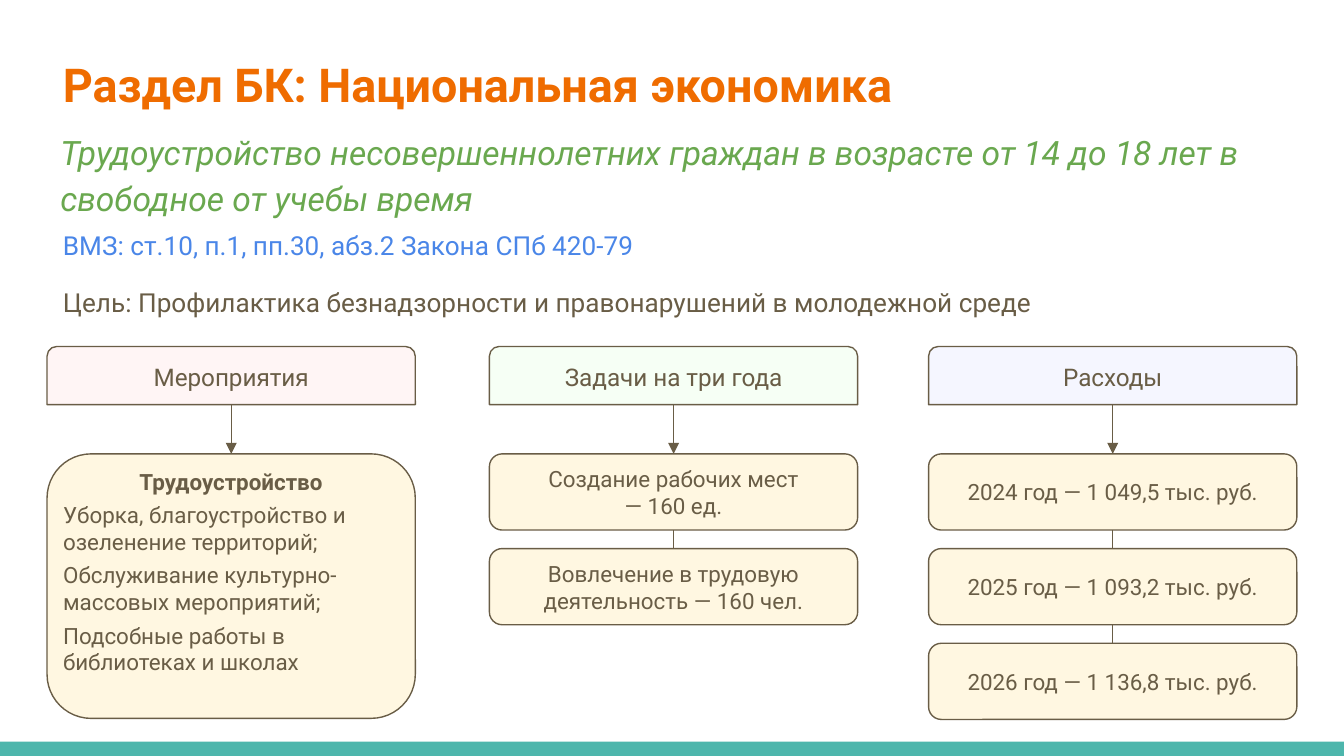
import pptx
import pptx.dml.color
import pptx.enum.shapes
import pptx.enum.text
import pptx.oxml.ns
import pptx.util
from lxml import etree

Cm = pptx.util.Cm
RGBColor = pptx.dml.color.RGBColor
Align = pptx.enum.text.PP_ALIGN
Anchor = pptx.enum.text.MSO_ANCHOR
Shape = pptx.enum.shapes.MSO_SHAPE

ORANGE = RGBColor(0xEF, 0x6C, 0x00)
GREEN = RGBColor(0x6A, 0xA8, 0x4F)
BLUE = RGBColor(0x4A, 0x86, 0xE8)
BROWN = RGBColor(0x69, 0x5D, 0x46)
TEAL = RGBColor(0x4D, 0xB6, 0xAC)
CREAM = RGBColor(0xFF, 0xF7, 0xE1)
PINK = RGBColor(0xFF, 0xF5, 0xF5)
MINT = RGBColor(0xF6, 0xFF, 0xF5)
LILAC = RGBColor(0xF5, 0xF6, 0xFF)

PAGE_WIDTH, PAGE_HEIGHT = 25.4, 14.29
COLUMN_TOP, COLUMN_WIDTH = 6.55, 6.96
HEADER_HEIGHT, ARROW_HEIGHT = 1.1, 0.93
CARD_HEIGHT, CARD_PITCH = 1.44, 1.79
PLAN_HEIGHT = 5


def add_text(frame, text, size=12, color=BROWN, bold=False, italic=False,
             align=Align.LEFT, spacing=1.0, before=0):
    """Append one formatted paragraph to a text frame."""
    para = frame.paragraphs[0] if not frame.text else frame.add_paragraph()
    para.alignment = align
    para.line_spacing = spacing
    para.space_before = pptx.util.Pt(before)
    span = para.add_run()
    span.text = text
    span.font.name = "Roboto"
    span.font.size = pptx.util.Pt(size)
    span.font.bold = bold
    span.font.italic = italic
    span.font.color.rgb = color


def set_frame(frame, anchor=Anchor.TOP, margin=0.25, top_margin=0.25):
    """Set wrapping, anchor and margins of a text frame."""
    frame.word_wrap = True
    frame.auto_size = pptx.enum.text.MSO_AUTO_SIZE.NONE
    frame.vertical_anchor = anchor
    frame.margin_left = frame.margin_right = Cm(margin)
    frame.margin_top = frame.margin_bottom = Cm(top_margin)


def add_box(page, kind, left, top, width, height, fill, outline=BROWN):
    """Add a filled shape with a thin outline, or with none."""
    box = page.shapes.add_shape(kind, Cm(left), Cm(top), Cm(width), Cm(height))
    box.shadow.inherit = False
    box.fill.solid()
    box.fill.fore_color.rgb = fill
    if outline is None:
        box.line.fill.background()
    else:
        box.line.color.rgb = outline
        box.line.width = pptx.util.Pt(0.75)
    return box


def add_link(page, x, top, bottom, arrow=False):
    """Add a vertical connector, with an arrowhead at its foot if asked."""
    link = page.shapes.add_connector(
        pptx.enum.shapes.MSO_CONNECTOR.STRAIGHT, Cm(x), Cm(top), Cm(x), Cm(bottom))
    link.line.color.rgb = BROWN
    link.line.width = pptx.util.Pt(0.75)
    if arrow:
        tail = etree.SubElement(link.line._get_or_add_ln(), pptx.oxml.ns.qn("a:tailEnd"))
        tail.set("type", "triangle")
    etree.SubElement(link._element.spPr, pptx.oxml.ns.qn("a:effectLst"))


def add_heading(page, left, top, width):
    """Place the title and the three lines of text below it."""
    title = page.shapes.title
    title.left, title.top, title.width, title.height = Cm(left), Cm(top), Cm(width), Cm(1.55)
    set_frame(title.text_frame)
    add_text(title.text_frame, "Раздел БК: Национальная экономика",
             size=25, color=ORANGE, bold=True)
    lines = [
        (-0.05, 1.32, 1.96, "Трудоустройство несовершеннолетних граждан в возрасте от 14 до 18 лет "
         "в свободное от учебы время", dict(size=18, color=GREEN, italic=True, spacing=1.15)),
        (0, 3.28, 1.24, "ВМЗ: ст.10, п.1, пп.30, абз.2 Закона СПб 420-79",
         dict(size=14, color=BLUE)),
        (0, 4.35, 1.12, "Цель: Профилактика безнадзорности и правонарушений в молодежной среде",
         dict(size=14)),
    ]
    for shift, offset, height, text, style in lines:
        box = page.shapes.add_textbox(Cm(left + shift), Cm(top + offset), Cm(width), Cm(height))
        set_frame(box.text_frame)
        add_text(box.text_frame, text, **style)


def add_header(page, left, top, width, text, fill):
    """Place a column header with its arrow and return the top of the cards."""
    header = add_box(page, Shape.ROUND_2_SAME_RECTANGLE, left, top, width, HEADER_HEIGHT, fill)
    set_frame(header.text_frame, Anchor.MIDDLE, top_margin=0)
    add_text(header.text_frame, text, size=13, align=Align.CENTER)
    bottom = top + HEADER_HEIGHT
    add_link(page, left + width / 2, bottom, bottom + ARROW_HEIGHT, arrow=True)
    return bottom + ARROW_HEIGHT


def add_plan(page, left, top, width, height, heading, items):
    """Place one large card with a heading and a list of activities."""
    card = add_box(page, Shape.ROUNDED_RECTANGLE, left, top, width, height, CREAM)
    set_frame(card.text_frame, margin=0.06, top_margin=0.02)
    add_text(card.text_frame, heading, bold=True, align=Align.CENTER)
    for item in items:
        add_text(card.text_frame, item, before=3.5)


def add_cards(page, left, top, width, cards):
    """Place a chain of equal cards joined by short lines."""
    for index, lines in enumerate(cards):
        card_top = top + index * CARD_PITCH
        if index:
            add_link(page, left + width / 2, card_top - CARD_PITCH + CARD_HEIGHT, card_top)
        card = add_box(page, Shape.ROUNDED_RECTANGLE, left, card_top, width, CARD_HEIGHT, CREAM)
        set_frame(card.text_frame, Anchor.MIDDLE, top_margin=0)
        for line in lines:
            add_text(card.text_frame, line, align=Align.CENTER)


def main():
    """Build the slide and save the deck."""
    deck = pptx.Presentation()
    deck.slide_width, deck.slide_height = Cm(PAGE_WIDTH), Cm(PAGE_HEIGHT)
    page = deck.slides.add_slide(deck.slide_layouts.get_by_name("Title Only"))
    add_box(page, Shape.RECTANGLE, 0, PAGE_HEIGHT - 0.27, PAGE_WIDTH, 0.27, TEAL, outline=None)
    add_heading(page, 0.94, 0.81, 23.67)

    plan_left, tasks_left, costs_left = 0.89, 9.25, 17.55
    top = add_header(page, plan_left, COLUMN_TOP, COLUMN_WIDTH, "Мероприятия", PINK)
    add_plan(page, plan_left, top, COLUMN_WIDTH, PLAN_HEIGHT, "Трудоустройство", [
        "Уборка, благоустройство и озеленение территорий;",
        "Обслуживание культурно-массовых мероприятий;",
        "Подсобные работы в библиотеках и школах",
    ])
    top = add_header(page, tasks_left, COLUMN_TOP, COLUMN_WIDTH, "Задачи на три года", MINT)
    add_cards(page, tasks_left, top, COLUMN_WIDTH, [
        ["Создание рабочих мест", "— 160 ед."],
        ["Вовлечение в трудовую деятельность — 160 чел."],
    ])
    top = add_header(page, costs_left, COLUMN_TOP, COLUMN_WIDTH, "Расходы", LILAC)
    costs = {2024: "1 049,5", 2025: "1 093,2", 2026: "1 136,8"}
    add_cards(page, costs_left, top, COLUMN_WIDTH,
              [[f"{year} год — {cost} тыс. руб."] for year, cost in costs.items()])
    deck.save("out.pptx")


if __name__ == "__main__":
    main()
